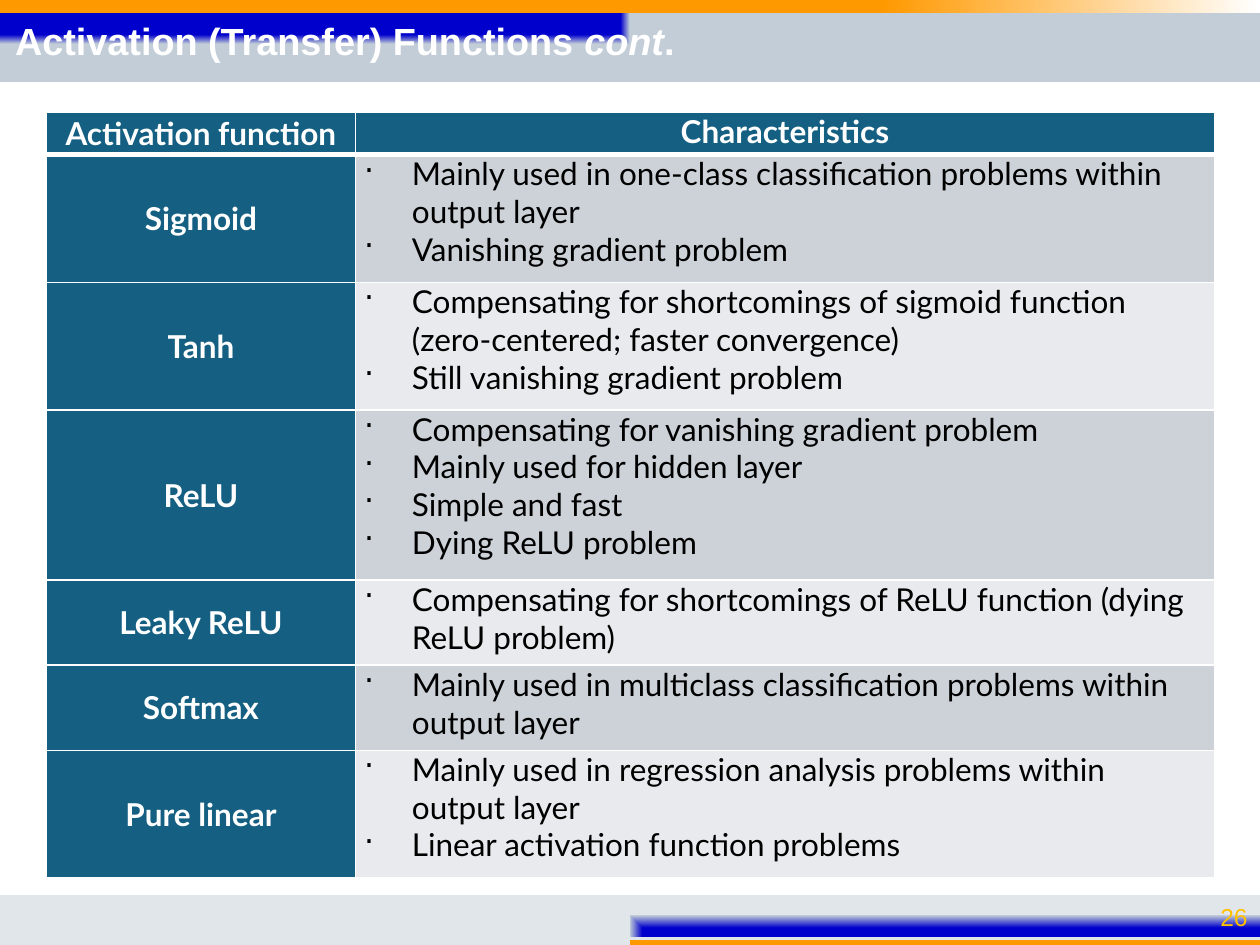
from dataclasses import dataclass

from lxml.etree import SubElement
from pptx import Presentation
from pptx.dml.color import RGBColor
from pptx.enum.text import MSO_ANCHOR, MSO_AUTO_SIZE, PP_ALIGN
from pptx.enum.shapes import MSO_SHAPE
from pptx.oxml import parse_xml
from pptx.oxml.ns import nsdecls, qn
from pptx.util import Inches, Pt

PAGE_WIDTH, PAGE_HEIGHT = 10, 7.5
TABLE_LEFT, TABLE_TOP = 0.37, 0.89
COLUMN_WIDTHS = (2.45, 6.82)
LINE_HEIGHT = 6.08 / 18  # every row is a whole number of text lines


@dataclass(frozen=True)
class Theme:
    blue: str = "0000CC"
    orange: str = "FF9900"
    steel: str = "C2CDD7"
    mist: str = "E1E6EB"
    white: str = "FFFFFF"
    black: str = "000000"
    amber: str = "FFC000"
    teal: str = "156082"
    bands: tuple[str, str] = ("CCD2D8", "E8EAED")
    heading_font: str = "Arial"
    table_font: str = "Lato"
    title_size: float = 21.6
    number_size: float = 14
    table_size: float = 18


THEME = Theme()
TOP_LEFT = '<a:path path="rect"><a:fillToRect r="100000" b="100000"/></a:path>'
BOTTOM_RIGHT = '<a:path path="rect"><a:fillToRect l="100000" t="100000"/></a:path>'
LEFT_TO_RIGHT = '<a:lin ang="0" scaled="1"/>'


@dataclass(frozen=True)
class Bar:
    top: float
    height: float
    stops: tuple[tuple[int, str], ...]
    direction: str


@dataclass(frozen=True)
class Activation:
    name: str
    lines: int
    traits: tuple[str, ...]


BARS = (
    Bar(0.05, 0.6, ((25, THEME.blue), (75, THEME.blue), (100, THEME.steel)), TOP_LEFT),
    Bar(0, 0.1, ((46, THEME.orange), (70, THEME.orange), (100, THEME.white),
                 (100, THEME.mist)), LEFT_TO_RIGHT),
    Bar(7.42, 0.08, ((50, THEME.orange), (93, THEME.orange), (100, THEME.white),
                     (100, THEME.mist)), BOTTOM_RIGHT),
    Bar(7.1, 0.33, ((40, THEME.blue), (100, THEME.steel), (100, THEME.mist)),
        BOTTOM_RIGHT),
)

ACTIVATIONS = (
    Activation("Sigmoid", 3, (
        "Mainly used in one-class classification problems within output layer",
        "Vanishing gradient problem")),
    Activation("Tanh", 3, (
        "Compensating for shortcomings of sigmoid function "
        "(zero-centered; faster convergence)",
        "Still vanishing gradient problem")),
    Activation("ReLU", 4, (
        "Compensating for vanishing gradient problem",
        "Mainly used for hidden layer",
        "Simple and fast",
        "Dying ReLU problem")),
    Activation("Leaky ReLU", 2, (
        "Compensating for shortcomings of ReLU function (dying ReLU problem)",)),
    Activation("Softmax", 2, (
        "Mainly used in multiclass classification problems within output layer",)),
    Activation("Pure linear", 3, (
        "Mainly used in regression analysis problems within output layer",
        "Linear activation function problems")),
)


def style_font(font, name: str, size: float, color: str, bold: bool = False) -> None:
    font.name, font.size, font.bold = name, Pt(size), bold
    font.color.rgb = RGBColor.from_string(color)


def draw_bar(page, bar: Bar) -> None:
    shape = page.shapes.add_shape(MSO_SHAPE.RECTANGLE, 0, Inches(bar.top),
                                  Inches(PAGE_WIDTH), Inches(bar.height))
    shape.shadow.inherit = False
    shape.line.fill.background()
    stops = "".join(f'<a:gs pos="{share * 1000}"><a:srgbClr val="{color}"/></a:gs>'
                    for share, color in bar.stops)
    gradient = parse_xml(f'<a:gradFill rotWithShape="1" {nsdecls("a")}>'
                         f"<a:gsLst>{stops}</a:gsLst>{bar.direction}</a:gradFill>")
    shape.element.spPr.find(qn("a:prstGeom")).addnext(gradient)


def draw_title(page) -> None:
    title = page.shapes.title
    title.left, title.top = Inches(0.02), Inches(0.11)
    title.width, title.height = Inches(PAGE_WIDTH - 0.02), Inches(0.46)
    frame = title.text_frame
    frame.vertical_anchor = MSO_ANCHOR.MIDDLE
    frame.auto_size = MSO_AUTO_SIZE.NONE
    para = frame.paragraphs[0]
    para.alignment, para.line_spacing = PP_ALIGN.LEFT, 0.9
    style_font(para.font, THEME.heading_font, THEME.title_size, THEME.white, True)
    for text, italic in (("Activation (Transfer) Functions ", False),
                         ("cont", True), (".", False)):
        span = para.add_run()
        span.text, span.font.italic = text, italic
    # Bring the title in front of the bars
    title.element.getparent().append(title.element)


def draw_page_number(page, number: int) -> None:
    box = page.shapes.add_textbox(Inches(PAGE_WIDTH - 0.76), Inches(7.13),
                                  Inches(0.76), Inches(0.29))
    box.text_frame.word_wrap = True
    box.text_frame.vertical_anchor = MSO_ANCHOR.MIDDLE
    para = box.text_frame.paragraphs[0]
    para.text, para.alignment = str(number), PP_ALIGN.RIGHT
    style_font(para.font, THEME.heading_font, THEME.number_size, THEME.amber)


def add_bullet(para) -> None:
    properties = para._p.get_or_add_pPr()
    properties.set("marL", str(Inches(0.38)))
    properties.set("indent", str(-Inches(0.38)))
    SubElement(properties, qn("a:buChar")).set("char", "·")


def fill_cell(cell, texts: tuple[str, ...], fill: str, heading: bool = True,
              anchor=MSO_ANCHOR.MIDDLE, bottom_line: float = 1) -> None:
    cell.margin_left = cell.margin_right = Inches(0.07)
    cell.margin_top = cell.margin_bottom = 0
    cell.vertical_anchor = anchor
    cell.text = "\n".join(texts)
    for para in cell.text_frame.paragraphs:
        para.alignment = PP_ALIGN.CENTER if heading else PP_ALIGN.LEFT
        if not heading:
            add_bullet(para)
        style_font(para.font, THEME.table_font, THEME.table_size,
                   THEME.white if heading else THEME.black, heading)
    # Borders come before the fill in the cell's properties
    properties = cell._tc.get_or_add_tcPr()
    for side, width in (("L", 1), ("R", 1), ("T", 1), ("B", bottom_line)):
        properties.append(parse_xml(
            f'<a:ln{side} w="{Pt(width)}" {nsdecls("a")}><a:solidFill>'
            f'<a:srgbClr val="{THEME.white}"/></a:solidFill></a:ln{side}>'))
    cell.fill.solid()
    cell.fill.fore_color.rgb = RGBColor.from_string(fill)


def draw_table(page) -> None:
    line_counts = [1] + [activation.lines for activation in ACTIVATIONS]
    table = page.shapes.add_table(
        len(line_counts), len(COLUMN_WIDTHS), Inches(TABLE_LEFT), Inches(TABLE_TOP),
        Inches(sum(COLUMN_WIDTHS)), Inches(sum(line_counts) * LINE_HEIGHT)).table
    for column, width in zip(table.columns, COLUMN_WIDTHS):
        column.width = Inches(width)
    for row, lines in zip(table.rows, line_counts):
        row.height = Inches(lines * LINE_HEIGHT)

    # Header row
    fill_cell(table.cell(0, 0), ("Activation function",), THEME.teal, bottom_line=3)
    fill_cell(table.cell(0, 1), ("Characteristics",), THEME.teal,
              anchor=MSO_ANCHOR.TOP, bottom_line=3)
    # One row per activation function, in alternating bands
    for index, activation in enumerate(ACTIVATIONS):
        fill_cell(table.cell(index + 1, 0), (activation.name,), THEME.teal)
        fill_cell(table.cell(index + 1, 1), activation.traits, THEME.bands[index % 2],
                  heading=False, anchor=MSO_ANCHOR.TOP)


def main() -> None:
    deck = Presentation()
    deck.slide_width, deck.slide_height = Inches(PAGE_WIDTH), Inches(PAGE_HEIGHT)
    page = deck.slides.add_slide(deck.slide_layouts[5])
    for bar in BARS:
        draw_bar(page, bar)
    draw_page_number(page, 26)
    draw_title(page)
    draw_table(page)
    deck.save("out.pptx")


if __name__ == "__main__":
    main()
